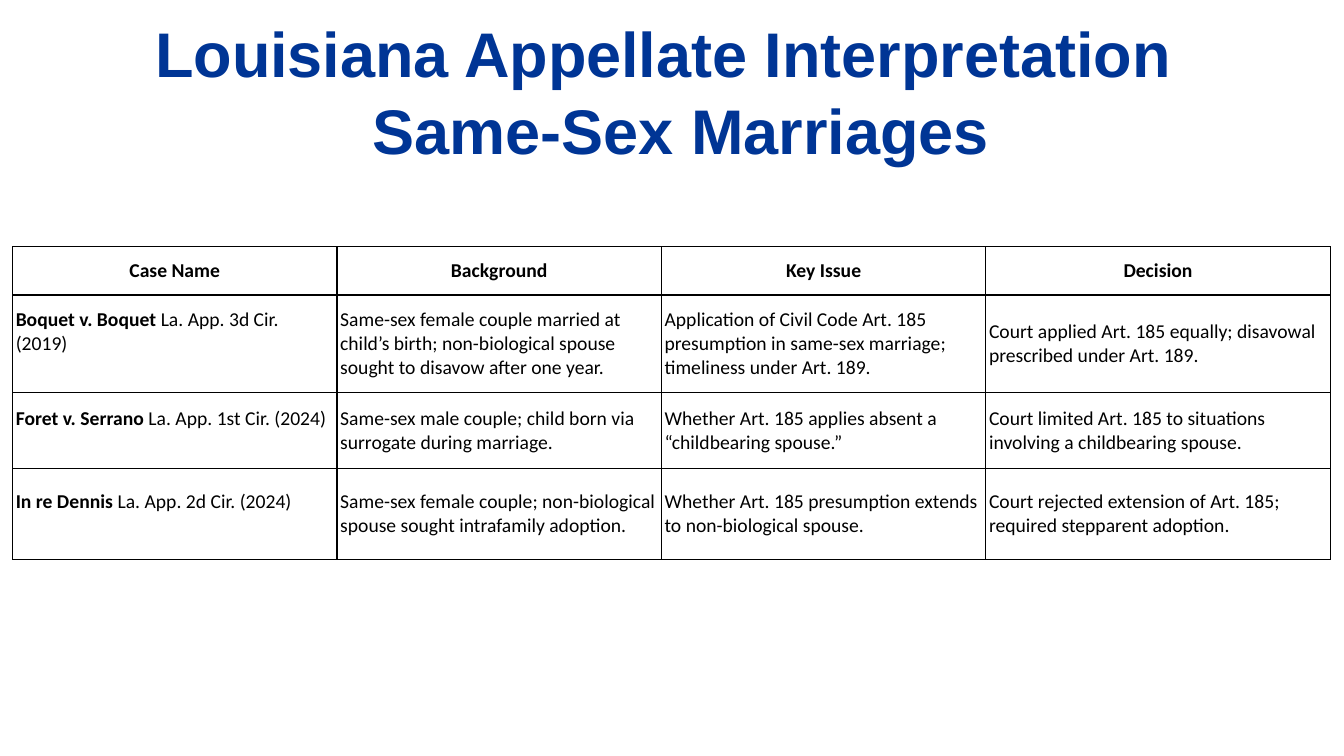
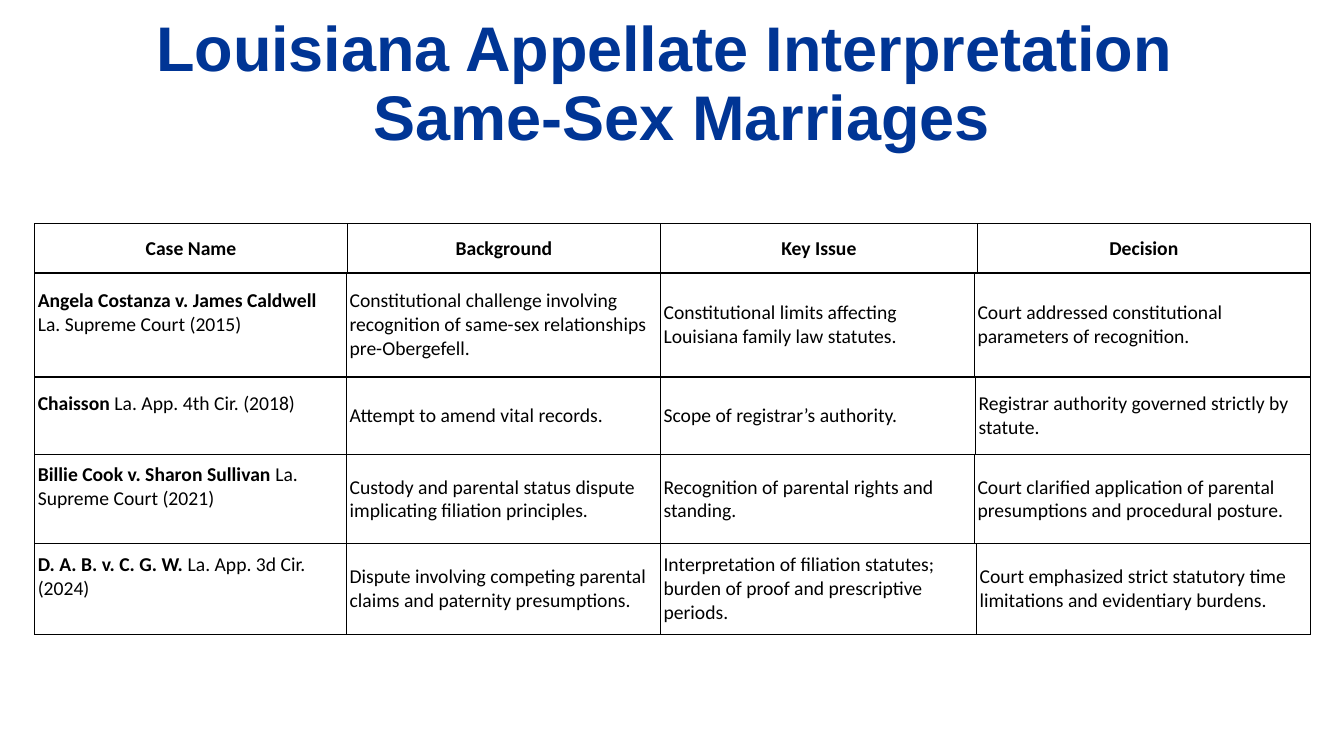
"""Build two slides that tabulate Louisiana appellate decisions."""
from dataclasses import dataclass

from lxml import etree
from pptx import Presentation
from pptx import util as u
from pptx.dml.color import RGBColor
from pptx.enum import text
from pptx.oxml import ns

PX = 9525
SLIDE_SIZE = (1280, 720)


@dataclass(frozen=True)
class Theme:
    """Colours, fonts and sizes shared by the slides."""
    title_color: str = "003595"
    text_color: str = "000000"
    border_color: str = "000000"
    title_font: str = "Arial"
    table_font: str = "Calibri"
    title_size: int = 45
    table_size: int = 14
    border_width: int = 1
    inset_x: int = 3
    inset_y: int = 2
    case_lift: int = 23


THEME = Theme()
TITLE_LINES = ("Louisiana Appellate Interpretation ", " Same-Sex Marriages")
HEADINGS = ("Case Name", "Background", "Key Issue", "Decision")

RECENT_CASES = [
    (("Boquet v. Boquet ", "La. App. 3d Cir. (2019)"),
     "Same-sex female couple married at child’s birth; non-biological spouse sought to disavow after one year.",
     "Application of Civil Code Art. 185 presumption in same-sex marriage; timeliness under Art. 189.",
     "Court applied Art. 185 equally; disavowal prescribed under Art. 189."),
    (("Foret v. Serrano ", "La. App. 1st Cir. (2024)"),
     "Same-sex male couple; child born via surrogate during marriage.",
     "Whether Art. 185 applies absent a “childbearing spouse.”",
     "Court limited Art. 185 to situations involving a childbearing spouse."),
    (("In re Dennis ", "La. App. 2d Cir. (2024)"),
     "Same-sex female couple; non-biological spouse sought intrafamily adoption.",
     "Whether Art. 185 presumption extends to non-biological spouse.",
     "Court rejected extension of Art. 185; required stepparent adoption."),
]

RELATED_CASES = [
    (("Angela Costanza v. James Caldwell ", "La. Supreme Court (2015)"),
     "Constitutional challenge involving recognition of same-sex relationships pre-Obergefell.",
     "Constitutional limits affecting Louisiana family law statutes.",
     "Court addressed constitutional parameters of recognition."),
    (("Chaisson ", "La. App. 4th Cir. (2018)"),
     "Attempt to amend vital records.",
     "Scope of registrar’s authority.",
     "Registrar authority governed strictly by statute."),
    (("Billie Cook v. Sharon Sullivan ", "La. Supreme Court (2021)"),
     "Custody and parental status dispute implicating filiation principles.",
     "Recognition of parental rights and standing.",
     "Court clarified application of parental presumptions and procedural posture."),
    (("D. A. B. v. C. G. W. ", "La. App. 3d Cir. (2024)"),
     "Dispute involving competing parental claims and paternity presumptions.",
     "Interpretation of filiation statutes; burden of proof and prescriptive periods.",
     "Court emphasized strict statutory time limitations and evidentiary burdens."),
]


def px(*lengths):
    """Turn pixel lengths into EMU."""
    return [u.Emu(length * PX) for length in lengths]


def style_font(font, name, size, color, bold):
    """Apply a typeface, size, colour and weight."""
    font.name, font.size, font.bold = name, u.Pt(size), bold
    font.color.rgb = RGBColor.from_string(color)


def add_title(slide, box, anchor, line_points):
    """Place the two-line centred title in its box."""
    frame = slide.shapes.add_textbox(*px(*box)).text_frame
    frame.word_wrap = True
    frame.auto_size = text.MSO_AUTO_SIZE.SHAPE_TO_FIT_TEXT
    frame.vertical_anchor = anchor
    frame.text = "\n".join(TITLE_LINES)
    for paragraph in frame.paragraphs:
        paragraph.alignment = text.PP_ALIGN.CENTER
        paragraph.line_spacing = u.Pt(line_points)
        style_font(paragraph.font, THEME.title_font, THEME.title_size, THEME.title_color, True)


def add_borders(cell):
    """Draw a solid line on all four sides of a cell."""
    properties = cell._tc.get_or_add_tcPr()
    for index, side in enumerate(("lnL", "lnR", "lnT", "lnB")):
        line = etree.Element(ns.qn(f"a:{side}"), w=str(u.Pt(THEME.border_width)))
        fill = etree.SubElement(line, ns.qn("a:solidFill"))
        etree.SubElement(fill, ns.qn("a:srgbClr"), val=THEME.border_color)
        properties.insert(index, line)


def fill_cell(cell, content, is_heading):
    """Write a heading, a case name with its citation, or plain text."""
    is_case = isinstance(content, tuple)
    cell.fill.background()
    add_borders(cell)
    cell.vertical_anchor = text.MSO_ANCHOR.MIDDLE
    cell.margin_left, cell.margin_right = px(THEME.inset_x, THEME.inset_x)
    bottom = THEME.inset_y + (THEME.case_lift if is_case else 0)
    cell.margin_top, cell.margin_bottom = px(THEME.inset_y, bottom)
    paragraph = cell.text_frame.paragraphs[0]
    paragraph.alignment = text.PP_ALIGN.CENTER if is_heading else text.PP_ALIGN.LEFT
    style_font(paragraph.font, THEME.table_font, THEME.table_size, THEME.text_color, is_heading)
    for index, part in enumerate(content if is_case else (content,)):
        run = paragraph.add_run()
        run.text = part
        if is_case:
            run.font.bold = index == 0


def add_case_table(slide, origin, widths, heights, rows):
    """Place a bordered table at its origin and return its bottom edge."""
    box = (*origin, sum(widths), sum(heights))
    table = slide.shapes.add_table(len(rows), len(widths), *px(*box)).table
    table.first_row = table.horz_banding = False
    for column, width in zip(table.columns, px(*widths)):
        column.width = width
    for row, height, contents in zip(table.rows, px(*heights), rows):
        row.height = height
        for cell, content in zip(row.cells, contents):
            fill_cell(cell, content, contents is HEADINGS)
    return origin[1] + sum(heights)


def build_recent_cases(slide):
    """Lay out the recent decisions as a single table."""
    add_case_table(slide, (12, 235), (309, 309, 309, 328), (46, 93, 72, 87),
                   [HEADINGS, *RECENT_CASES])
    add_title(slide, (0, 8, 1280, 156), text.MSO_ANCHOR.TOP, 55)


def build_related_cases(slide):
    """Lay out the related decisions as a stack of one-row tables."""
    widths = ((298, 298, 302, 317), (297, 299, 299, 320), (297, 299, 300, 319),
              (297, 299, 299, 320), (297, 299, 301, 318))
    heights = (47, 99, 74, 85, 86)
    top = 213
    for columns, height, row in zip(widths, heights, [HEADINGS, *RELATED_CASES]):
        top = add_case_table(slide, (33, top), columns, (height,), [row])
    add_title(slide, (2, 10, 1278, 140), text.MSO_ANCHOR.MIDDLE, 49.5)


def main():
    """Create the presentation and save it."""
    presentation = Presentation()
    presentation.slide_width, presentation.slide_height = px(*SLIDE_SIZE)
    for build in (build_recent_cases, build_related_cases):
        build(presentation.slides.add_slide(presentation.slide_layouts[6]))
    presentation.save("out.pptx")


if __name__ == "__main__":
    main()
